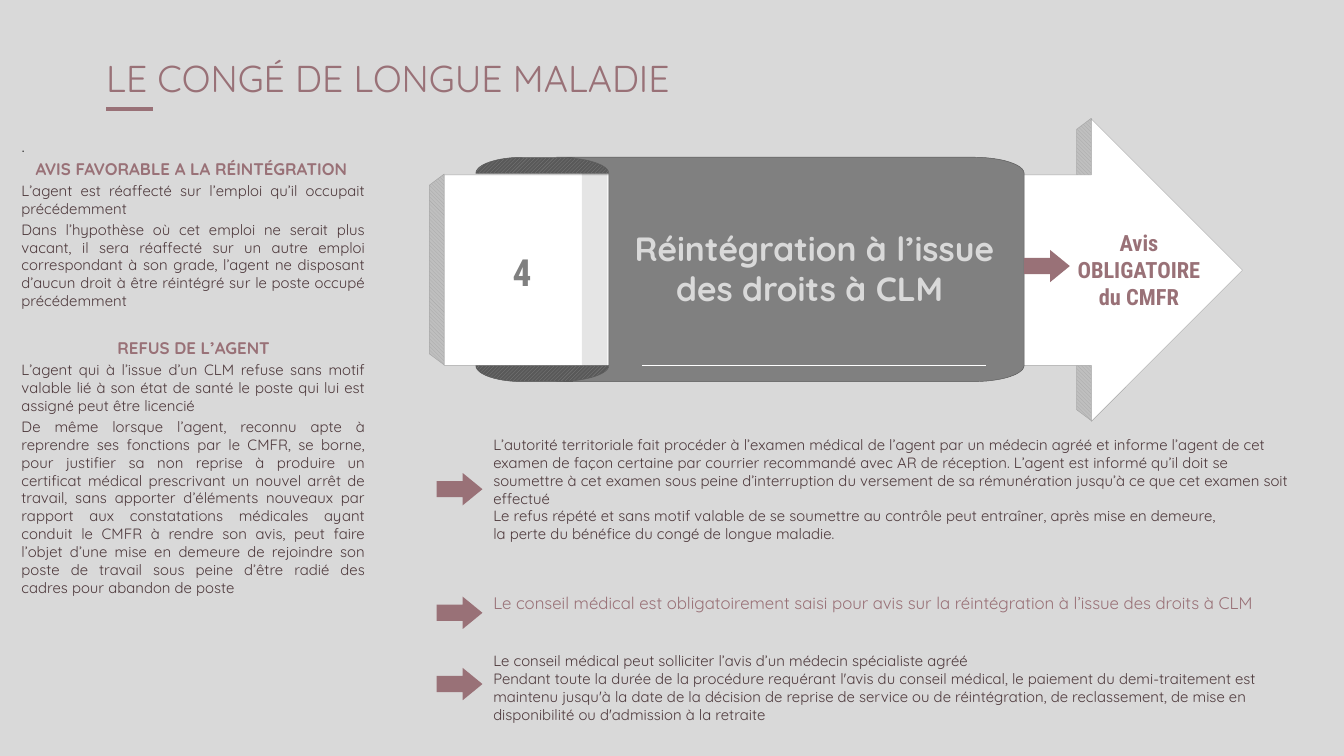
"""Build the slide on reinstatement at the end of a long sickness leave."""
from math import cos, radians, sin

from lxml.etree import SubElement
from pptx import Presentation
from pptx.dml.color import RGBColor
from pptx.enum.dml import MSO_PATTERN
from pptx.enum.shapes import MSO_CONNECTOR, MSO_SHAPE
from pptx.enum.text import MSO_ANCHOR, MSO_AUTO_SIZE, PP_ALIGN
from pptx.oxml.ns import qn
from pptx.util import Inches, Pt

COLORS = {
    "background": "D9D9D9", "accent": "997177", "text": "4D383B", "white": "FFFFFF", "soft": "414141",
    "gray": "808080", "dark": "595959", "edge": "A6A6A6", "side": "BFBFBF", "black": "000000",
}
SANS, CONDENSED = "Quicksand", "Roboto Condensed"
FOLD_TOP, FOLD_BOTTOM, FOLD_HEIGHT = 1.29, 2.72, 0.12
ARROW_TOPS = (1.86, 3.52, 4.44, 4.97)

ADVICE = [
    (".", 8, "soft", False, PP_ALIGN.JUSTIFY, 0),
    ("AVIS FAVORABLE A LA RÉINTÉGRATION ", 9, "accent", True, PP_ALIGN.CENTER, 1.8),
    ("L’agent est réaffecté sur l’emploi qu’il occupait précédemment",
     8, "text", False, PP_ALIGN.JUSTIFY, 1.6),
    ("Dans l’hypothèse où cet emploi ne serait plus vacant, il sera réaffecté sur un autre emploi "
     "correspondant à son grade, l’agent ne disposant d’aucun droit à être réintégré sur le poste "
     "occupé précédemment", 8, "text", False, PP_ALIGN.JUSTIFY, 1.6),
    ("REFUS DE L’AGENT", 9, "accent", True, PP_ALIGN.CENTER, 15),
    ("L’agent qui à l’issue d’un CLM refuse sans motif valable lié à son état de santé le poste qui "
     "lui est assigné peut être licencié", 8, "text", False, PP_ALIGN.JUSTIFY, 1.6),
    ("De même lorsque l’agent, reconnu apte à reprendre ses fonctions par le CMFR, se borne, pour "
     "justifier sa non reprise à produire un certificat médical prescrivant un nouvel arrêt de "
     "travail, sans apporter d’éléments nouveaux par rapport aux constatations médicales ayant "
     "conduit le CMFR à rendre son avis, peut faire l’objet d’une mise en demeure de rejoindre son "
     "poste de travail sous peine d’être radié des cadres pour abandon de poste",
     8, "text", False, PP_ALIGN.JUSTIFY, 1.6),
]
EXAMINATION = [
    "L’autorité territoriale fait procéder à l’examen médical de l’agent par un médecin agréé et "
    "informe l’agent de cet examen de façon certaine par courrier recommandé avec AR de réception. "
    "L’agent est informé qu’il doit se soumettre à cet examen sous peine d’interruption du versement "
    "de sa rémunération jusqu’à ce que cet examen soit effectué",
    "Le refus répété et sans motif valable de se soumettre au contrôle peut entraîner, après mise en "
    "demeure,",
    "la perte du bénéfice du congé de longue maladie.",
]
COUNCIL = ["Le conseil médical est obligatoirement saisi pour avis sur la réintégration à l’issue des "
           "droits à CLM"]
SPECIALIST = [
    "Le conseil médical peut solliciter l’avis d’un médecin spécialiste agréé",
    "Pendant toute la durée de la procédure requérant l'avis du conseil médical, le paiement du "
    "demi-traitement est maintenu jusqu'à la date de la décision de reprise de service ou de "
    "réintégration, de reclassement, de mise en disponibilité ou d'admission à la retraite",
]


def rgb(name):
    """Return the named colour."""
    return RGBColor.from_string(COLORS[name])


def paint(shape, fill, line=None, pattern=None, back=None):
    """Give a shape its fill and outline, without shadow."""
    shape.shadow.inherit = False
    if pattern:
        shape.fill.patterned()
        shape.fill.pattern = pattern
        shape.fill.fore_color.rgb = rgb(fill)
        shape.fill.back_color.rgb = rgb(back)
    else:
        shape.fill.solid()
        shape.fill.fore_color.rgb = rgb(fill)
    if line:
        shape.line.color.rgb = rgb(line)
        shape.line.width = Pt(0.25)
    else:
        shape.line.fill.background()


def add_preset(slide, kind, place, fill, line=None, adjust=(), rotation=0, **pattern):
    """Add a painted preset shape."""
    shape = slide.shapes.add_shape(kind, *map(Inches, place))
    for index, value in enumerate(adjust):
        shape.adjustments[index] = value
    shape.rotation = rotation
    paint(shape, fill, line, **pattern)
    return shape


def add_rule(slide, left, right, top, color, width):
    """Add a horizontal line."""
    rule = slide.shapes.add_connector(
        MSO_CONNECTOR.STRAIGHT, Inches(left), Inches(top), Inches(right), Inches(top))
    rule.line.color.rgb = rgb(color)
    rule.line.width = Pt(width)
    SubElement(rule._element.spPr, qn("a:effectLst"))


def arc(x, y, radius, start, end):
    """Return points along a flattened quarter ellipse."""
    angles = [radians(start + (end - start) * step / 12) for step in range(13)]
    return [(x + radius * cos(angle), y + FOLD_HEIGHT * sin(angle)) for angle in angles]


def add_outline(slide, points, fill, **pattern):
    """Add a closed freeform through the points."""
    points = [(Inches(x), Inches(y)) for x, y in points]
    builder = slide.shapes.build_freeform(*points[0])
    builder.add_line_segments(points[1:], close=True)
    paint(builder.convert_to_shape(), fill, "dark", **pattern)


def format_frame(frame, margin=0, anchor=MSO_ANCHOR.TOP):
    """Set wrapping, margins and anchor of a text frame."""
    frame.word_wrap = True
    frame.auto_size = MSO_AUTO_SIZE.NONE
    frame.vertical_anchor = anchor
    frame.margin_left = frame.margin_right = Inches(margin)
    frame.margin_top = frame.margin_bottom = 0


def write(para, text, size, color, bold=False, align=PP_ALIGN.LEFT, font=SANS, before=0):
    """Fill and format a paragraph."""
    para.text = text
    para.alignment = align
    para.space_before = Pt(before)
    for span in para.runs:
        span.font.name = font
        span.font.size = Pt(size)
        span.font.bold = bold
        span.font.color.rgb = rgb(color)


def add_text(slide, place, paragraphs, margin=0, anchor=MSO_ANCHOR.TOP, font=SANS):
    """Add a text box from tuples of paragraph settings."""
    frame = slide.shapes.add_textbox(*map(Inches, place)).text_frame
    format_frame(frame, margin, anchor)
    for index, (text, size, color, bold, align, before) in enumerate(paragraphs):
        para = frame.add_paragraph() if index else frame.paragraphs[0]
        write(para, text, size, color, bold, align, font, before)
    return frame


def add_note(slide, top, height, texts, size=8, color="text"):
    """Add an explanatory note beside its arrow."""
    paragraphs = [(text, size, color, False, PP_ALIGN.LEFT, 0) for text in texts]
    add_text(slide, (3.67, top, 6.02, height), paragraphs)


def add_title(slide):
    """Place the title and its underline."""
    title = slide.shapes.title
    title.left, title.top, title.width, title.height = map(Inches, (0.79, 0.37, 7.45, 0.51))
    format_frame(title.text_frame)
    para = title.text_frame.paragraphs[0]
    write(para, "LE CONGÉ DE LONGUE MALADIE", 20, "accent")
    para.line_spacing = Pt(27)
    add_rule(slide, 0.79, 1.14, 0.81, "accent", 2.25)


def add_ribbon(slide):
    """Draw the large arrow wrapped by the gray ribbon."""
    side = {"pattern": MSO_PATTERN.DARK_DOWNWARD_DIAGONAL, "back": "side"}
    fold = {"pattern": MSO_PATTERN.LIGHT_UPWARD_DIAGONAL, "back": "dark"}
    add_preset(slide, MSO_SHAPE.TRAPEZOID, (6.94, 1.95, 2.25, 0.11), "edge", "edge", (0.75,), 270, **side)
    add_preset(slide, MSO_SHAPE.UP_ARROW, (5.15, -0.96, 2.25, 5.94), "white", "edge", (0.63, 0.5), 90)
    add_preset(slide, MSO_SHAPE.TRAPEZOID, (2.54, 1.95, 1.42, 0.11), "edge", "edge", (0.75,), 270, **side)
    add_outline(slide, arc(3.89, FOLD_TOP, 0.35, 180, 270) + arc(4.14, FOLD_TOP, 0.39, 270, 360),
                "gray", **fold)
    add_outline(slide, arc(4.14, FOLD_BOTTOM, 0.39, 0, 90) + arc(3.89, FOLD_BOTTOM, 0.35, 90, 180),
                "gray", **fold)
    shade = add_preset(slide, MSO_SHAPE.RECTANGLE, (4.33, 1.29, 0.19, 1.43), "black")
    color = shade._element.spPr.find(qn("a:solidFill")).find(qn("a:srgbClr"))
    SubElement(color, qn("a:alpha"), val="10000")
    add_outline(slide, arc(7.24, FOLD_TOP, 0.38, 270, 360) + arc(7.24, FOLD_BOTTOM, 0.38, 0, 90)
                + arc(4.14, FOLD_BOTTOM, 0.39, 90, 0) + arc(4.14, FOLD_TOP, 0.39, 360, 270), "gray")
    badge = add_preset(slide, MSO_SHAPE.OVAL, (3.63, 1.81, 0.51, 0.42), "white")
    format_frame(badge.text_frame, anchor=MSO_ANCHOR.MIDDLE)
    para = badge.text_frame.paragraphs[0]
    write(para, "4", 20, "gray", True, PP_ALIGN.CENTER, CONDENSED)
    para.space_after = Pt(3)
    add_text(slide, (4.51, 1.96, 3.1, 0.07),
             [("Réintégration à l’issue des droits à CLM ", 18, "background", True, PP_ALIGN.CENTER, 0)],
             0.08, MSO_ANCHOR.MIDDLE)
    add_rule(slide, 4.78, 7.34, FOLD_BOTTOM, "white", 0.75)
    add_text(slide, (7.96, 1.82, 1.03, 0.37),
             [("Avis OBLIGATOIRE du CMFR", 12, "accent", True, PP_ALIGN.CENTER, 0)],
             anchor=MSO_ANCHOR.MIDDLE, font=CONDENSED)


def main():
    """Build and save the deck."""
    deck = Presentation()
    deck.slide_width, deck.slide_height = Inches(10), Inches(10 * 9 / 16)
    slide = deck.slides.add_slide(deck.slide_layouts[5])
    slide.background.fill.solid()
    slide.background.fill.fore_color.rgb = rgb("background")
    add_title(slide)
    add_ribbon(slide)
    advice = add_text(slide, (0.16, 1.02, 2.56, 3.98), ADVICE)
    advice.paragraphs[0].runs[0].font.name = CONDENSED
    for top in ARROW_TOPS:
        left = 7.62 if top == ARROW_TOPS[0] else 3.25
        add_preset(slide, MSO_SHAPE.RIGHT_ARROW, (left, top, 0.34, 0.24), "accent", adjust=(0.5, 0.61))
    add_note(slide, 3.24, 0.92, EXAMINATION)
    add_note(slide, 4.41, 0.33, COUNCIL, 9, "accent")
    add_note(slide, 4.85, 0.33, SPECIALIST)
    deck.save("out.pptx")


if __name__ == "__main__":
    main()
